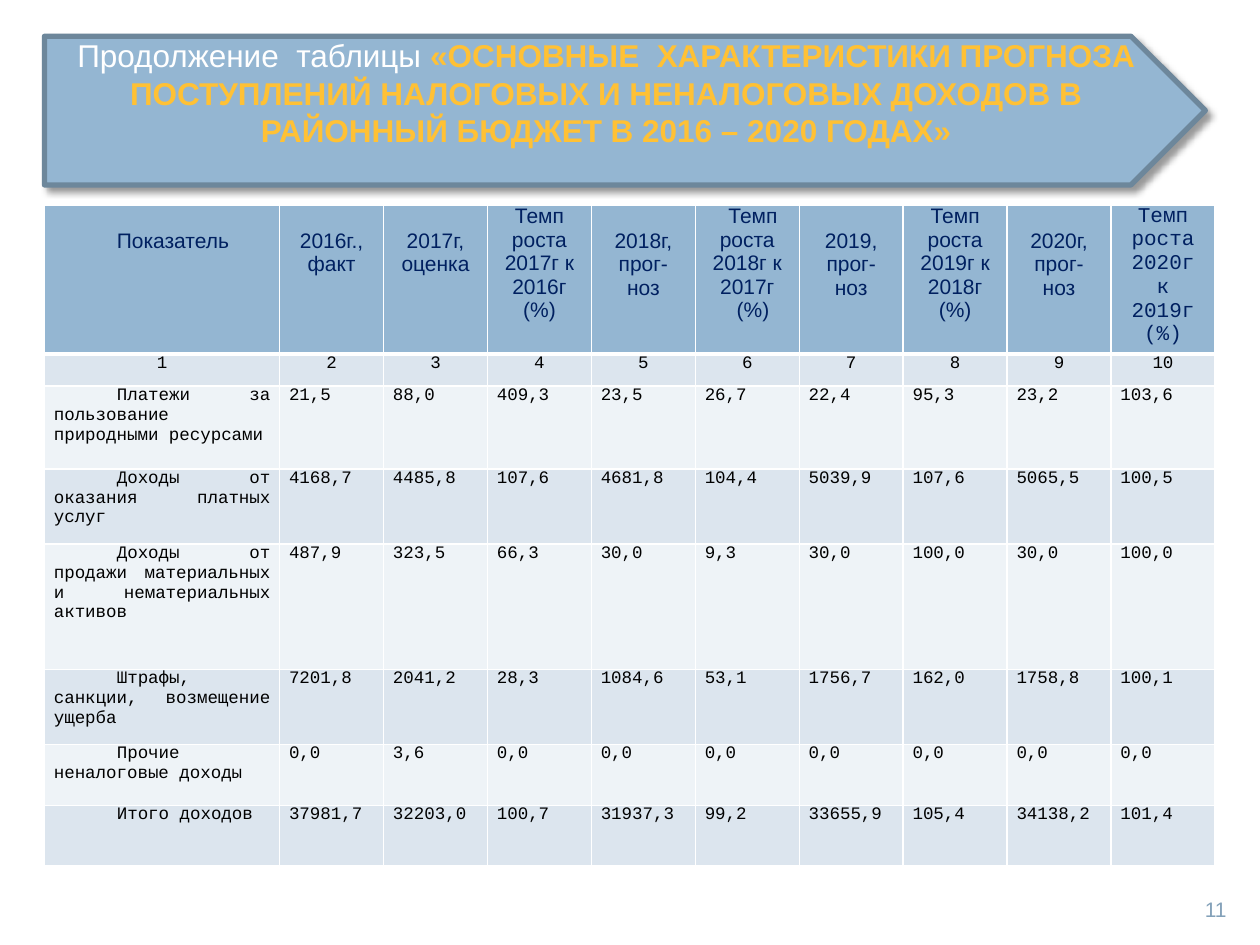
from lxml import etree
from pptx import Presentation
from pptx.dml.color import RGBColor
from pptx.enum.shapes import MSO_SHAPE
from pptx.enum.text import MSO_ANCHOR, PP_ALIGN
from pptx.oxml.ns import qn
from pptx.util import Pt

LEFT, CENTER = PP_ALIGN.LEFT, PP_ALIGN.CENTER
RIGHT, JUSTIFY = PP_ALIGN.RIGHT, PP_ALIGN.JUSTIFY
MIDDLE = MSO_ANCHOR.MIDDLE
PENTAGON = MSO_SHAPE.PENTAGON

BLUE, DARK_BLUE, NAVY = "94B6D2", "6D879B", "002060"
BANDS = ("DCE5EE", "EEF3F7")
WHITE, BLACK, GOLD, NUMBER_GREY = "FFFFFF", "000000", "FFC135", "83A1B9"
SANS, MONO = "Arial", "Courier New"
HEADER_LINE = 14
FIRST_LINE_INDENT = 36

INDICATOR_WIDTH, VALUE_WIDTH = 134.4, 59.4
ROW_HEIGHTS = (85.2, 18.4, 47.4, 43, 71.5, 43, 34.8, 34.8)

# Text, first-line indent, blank lines above
HEADERS = [
    ("Показатель", FIRST_LINE_INDENT, 1),
    ("2016г., факт", 0, 1),
    ("2017г, оценка", 0, 1),
    ("Темп роста 2017г к 2016г\n(%)", 0, 0),
    ("2018г, прог-\nноз", 0, 1),
    ("Темп роста 2018г к 2017г\n(%)", 6.5, 0),
    ("2019, прог-\nноз", 0, 1),
    ("Темп роста\n2019г к 2018г (%)", 0, 0),
    ("2020г, прог-\nноз", 0, 1),
    ("Темп роста 2020г к 2019г (%)", 0, 0),
]
INCOME = [
    ("Платежи за пользование природными ресурсами",
     "21,5 88,0 409,3 23,5 26,7 22,4 95,3 23,2 103,6"),
    ("Доходы от оказания платных услуг",
     "4168,7 4485,8 107,6 4681,8 104,4 5039,9 107,6 5065,5 100,5"),
    ("Доходы от продажи материальных и нематериальных активов",
     "487,9 323,5 66,3 30,0 9,3 30,0 100,0 30,0 100,0"),
    ("Штрафы, санкции, возмещение ущерба",
     "7201,8 2041,2 28,3 1084,6 53,1 1756,7 162,0 1758,8 100,1"),
    ("Прочие неналоговые доходы",
     "0,0 3,6 0,0 0,0 0,0 0,0 0,0 0,0 0,0"),
    ("Итого доходов",
     "37981,7 32203,0 100,7 31937,3 99,2 33655,9 105,4 34138,2 101,4"),
]


def color(hex_value):
    return RGBColor.from_string(hex_value)


def add_run(paragraph, text, size=10, font=MONO, ink=BLACK, bold=False):
    run = paragraph.add_run()
    run.text = text
    run.font.size = Pt(size)
    run.font.name = font
    run.font.bold = bold
    run.font.color.rgb = color(ink)


def write(frame, text, align=LEFT, indent=0, **run_format):
    """Fill a text frame, one paragraph for each line of text."""
    for index, line in enumerate(text.split("\n")):
        paragraph = frame.add_paragraph() if index else frame.paragraphs[0]
        paragraph.alignment = align
        if indent:
            properties = paragraph._p.get_or_add_pPr()
            properties.set("marL", "0")
            properties.set("indent", str(Pt(indent)))
        add_run(paragraph, line, **run_format)


def add_shadow(shape):
    shape.shadow.inherit = False
    effects = shape._element.spPr.find(qn("a:effectLst"))
    shadow = etree.SubElement(effects, qn("a:outerShdw"), blurRad=str(Pt(4)),
                              dist=str(Pt(3)), dir="2700000", algn="tl",
                              rotWithShape="0")
    shade = etree.SubElement(shadow, qn("a:srgbClr"), val=BLACK)
    etree.SubElement(shade, qn("a:alpha"), val="40000")


def set_borders(cell, top=1, bottom=1):
    properties = cell._tc.get_or_add_tcPr()
    sides = (("a:lnL", 1), ("a:lnR", 1), ("a:lnT", top), ("a:lnB", bottom))
    for position, (tag, width) in enumerate(sides):
        line = etree.Element(qn(tag), w=str(Pt(width)))
        fill = etree.SubElement(line, qn("a:solidFill"))
        etree.SubElement(fill, qn("a:srgbClr"), val=WHITE)
        properties.insert(position, line)


def add_title(slide, left, top, width, height):
    banner = slide.shapes.add_shape(PENTAGON, Pt(left), Pt(top), Pt(width), Pt(height))
    banner.fill.solid()
    banner.fill.fore_color.rgb = color(BLUE)
    banner.line.color.rgb = color(DARK_BLUE)
    banner.line.width = Pt(3)
    add_shadow(banner)
    frame = banner.text_frame
    frame.word_wrap = True
    frame.vertical_anchor = MIDDLE
    frame.margin_bottom = Pt(24.3)
    write(frame, "Продолжение  таблицы ", align=CENTER, size=18, font=SANS, ink=WHITE)
    add_run(frame.paragraphs[0],
            "«ОСНОВНЫЕ  ХАРАКТЕРИСТИКИ ПРОГНОЗА ПОСТУПЛЕНИЙ НАЛОГОВЫХ И "
            "НЕНАЛОГОВЫХ ДОХОДОВ В РАЙОННЫЙ БЮДЖЕТ В 2016 – 2020 ГОДАХ»",
            size=18, font=SANS, ink=GOLD, bold=True)


def fill_cell(cell, text, fill, margin_top=0, top=1, bottom=1, **text_format):
    cell.margin_left = cell.margin_right = Pt(5.4)
    cell.margin_top, cell.margin_bottom = Pt(margin_top), 0
    cell.fill.solid()
    cell.fill.fore_color.rgb = color(fill)
    set_borders(cell, top, bottom)
    write(cell.text_frame, text, **text_format)


def add_income_table(slide, left, top):
    columns = len(HEADERS)
    widths = [INDICATOR_WIDTH] + [VALUE_WIDTH] * (columns - 1)
    table = slide.shapes.add_table(len(ROW_HEIGHTS), columns, Pt(left), Pt(top),
                                   Pt(sum(widths)), Pt(sum(ROW_HEIGHTS))).table
    for column, width in zip(table.columns, widths):
        column.width = Pt(width)
    for row, height in zip(table.rows, ROW_HEIGHTS):
        row.height = Pt(height)

    for number, (header, indent, blank_lines) in enumerate(HEADERS):
        fill_cell(table.cell(0, number), header, BLUE, bottom=3,
                  margin_top=blank_lines * HEADER_LINE, indent=indent,
                  align=CENTER if number else JUSTIFY, size=12, ink=NAVY,
                  font=MONO if number == columns - 1 else SANS)
        fill_cell(table.cell(1, number), str(number + 1), BANDS[0], top=3, align=CENTER)

    for row, (indicator, values) in enumerate(INCOME, start=2):
        band = BANDS[(row - 1) % 2]
        fill_cell(table.cell(row, 0), indicator, band, align=JUSTIFY,
                  indent=FIRST_LINE_INDENT)
        for column, value in enumerate(values.split(), start=1):
            fill_cell(table.cell(row, column), value, band, align=JUSTIFY)


def add_page_number(slide, left, top, width, height):
    frame = slide.shapes.add_textbox(Pt(left), Pt(top), Pt(width), Pt(height)).text_frame
    frame.word_wrap = True
    frame.vertical_anchor = MIDDLE
    write(frame, "11", align=RIGHT, size=12, font=SANS, ink=NUMBER_GREY)


def main():
    presentation = Presentation()
    presentation.slide_width, presentation.slide_height = Pt(720), Pt(540)
    slide = presentation.slides.add_slide(presentation.slide_layouts[6])
    add_title(slide, 25.4, 20.7, 663.4, 85)
    add_income_table(slide, 25.4, 117)
    add_page_number(slide, 648, 510, 60, 19.5)
    presentation.save("out.pptx")


if __name__ == "__main__":
    main()
